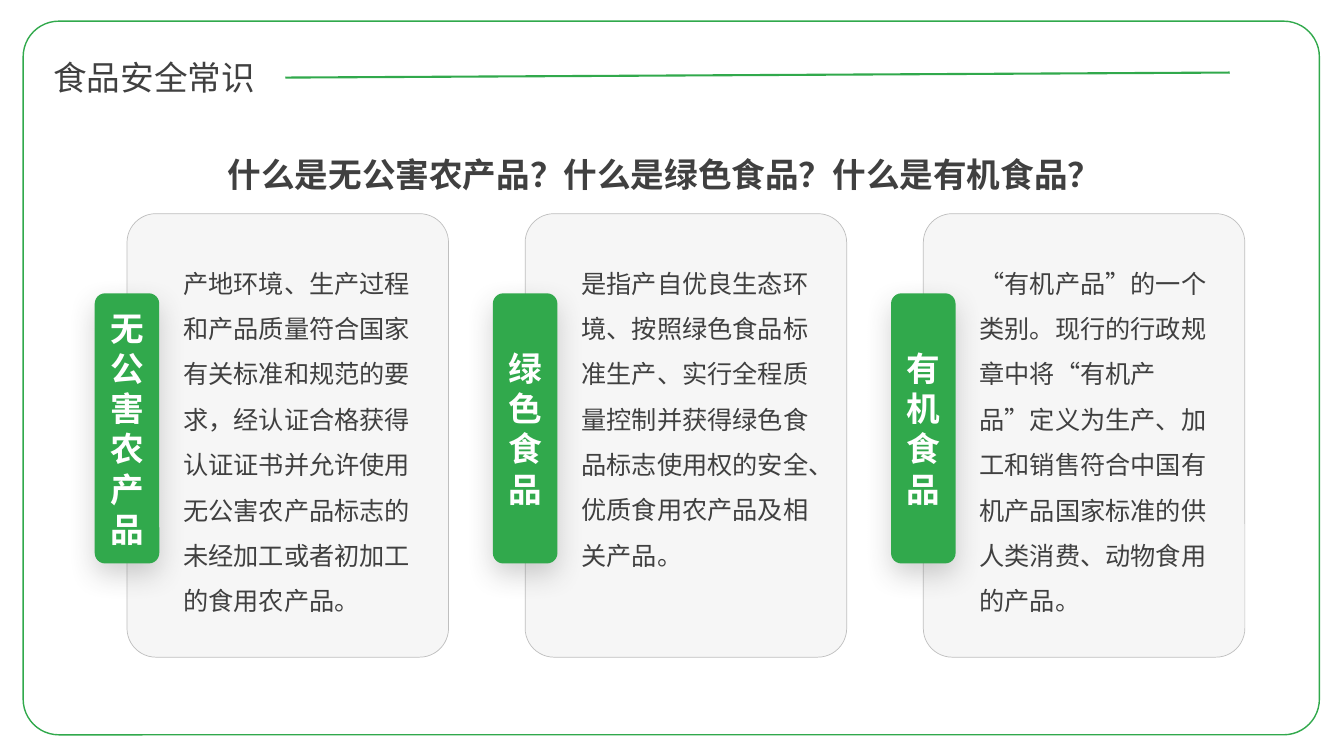
from dataclasses import dataclass

from lxml.etree import SubElement
from pptx import Presentation
from pptx.dml.color import RGBColor
from pptx.enum.shapes import MSO_CONNECTOR, MSO_SHAPE
from pptx.enum.text import MSO_ANCHOR, MSO_AUTO_SIZE, PP_ALIGN
from pptx.oxml.ns import qn
from pptx.shapes.autoshape import Shape
from pptx.util import Pt


@dataclass(frozen=True)
class Theme:
    font: str = "Noto Sans CJK SC"
    green: str = "31A94C"
    ink: str = "404040"
    white: str = "FFFFFF"
    panel: str = "F2F2F2"
    edge: str = "BFBFBF"
    head: int = 24
    body: int = 18


@dataclass(frozen=True)
class Box:
    x: float
    y: float
    w: float
    h: float

    def shift(self, dx: float) -> "Box":
        return Box(self.x + dx, self.y, self.w, self.h)

    def points(self) -> tuple:
        return Pt(self.x), Pt(self.y), Pt(self.w), Pt(self.h)


@dataclass(frozen=True)
class Card:
    label: str
    text: str
    height: float


THEME = Theme()
PITCH = 284.4
PANEL = Box(90.72, 152.64, 229.68, 316.8)
LABEL = Box(67.68, 209.52, 46.08, 192.96)

CARDS = [
    Card("无公害农产品",
         "产地环境、生产过程和产品质量符合国家有关标准和规范的要求，"
         "经认证合格获得认证证书并允许使用无公害农产品标志的"
         "未经加工或者初加工的食用农产品。", 265),
    Card("绿色食品",
         "是指产自优良生态环境、按照绿色食品标准生产、"
         "实行全程质量控制并获得绿色食品标志使用权的安全、"
         "优质食用农产品及相关产品。", 232.6),
    Card("有机食品",
         "“有机产品”的一个类别。现行的行政规章中将“有机产品”"
         "定义为生产、加工和销售符合中国有机产品国家标准的"
         "供人类消费、动物食用的产品。", 265),
]


def write(shape: Shape, text: str, size: int, color: str, bold: bool = False,
          align: PP_ALIGN = PP_ALIGN.LEFT, space: float = 1.0) -> None:
    frame = shape.text_frame
    frame.word_wrap = True
    para = frame.paragraphs[0]
    para.text = text
    para.alignment = align
    para.line_spacing = space
    font = para.font
    font.name = THEME.font
    font.size = Pt(size)
    font.bold = bold
    font.color.rgb = RGBColor.from_string(color)
    # Chinese glyphs take the East Asian typeface
    SubElement(font._element, qn("a:ea"), typeface=THEME.font)


def note(shapes, box: Box, text: str, size: int, **style) -> None:
    shape = shapes.add_textbox(*box.points())
    write(shape, text, size, THEME.ink, **style)
    shape.text_frame.auto_size = MSO_AUTO_SIZE.SHAPE_TO_FIT_TEXT


def plate(shapes, box: Box, round_by: float, fill: str,
          line: str = "", width: float = 0) -> Shape:
    shape = shapes.add_shape(MSO_SHAPE.ROUNDED_RECTANGLE, *box.points())
    shape.adjustments[0] = round_by
    shape.shadow.inherit = False
    shape.fill.solid()
    shape.fill.fore_color.rgb = RGBColor.from_string(fill)
    if line:
        shape.line.color.rgb = RGBColor.from_string(line)
        shape.line.width = Pt(width)
    else:
        shape.line.fill.background()
    return shape


def fade(color, percent: int) -> None:
    SubElement(color, qn("a:alpha"), val=str(percent * 1000))


def shade(shape: Shape) -> None:
    effects = shape._element.spPr.find(qn("a:effectLst"))
    outer = SubElement(effects, qn("a:outerShdw"), blurRad=str(Pt(20)),
                       dist=str(Pt(8)), dir=str(90 * 60000),
                       algn="t", rotWithShape="0")
    fade(SubElement(outer, qn("a:srgbClr"), val=THEME.ink), 23)


def draw_card(shapes, card: Card, dx: float) -> None:
    group = shapes.add_group_shape().shapes
    # Pale panel
    panel = plate(group, PANEL.shift(dx), 0.09, THEME.panel, THEME.edge, 0.5)
    fade(panel._element.spPr.find(qn("a:solidFill"))[0], 68)
    # Green label
    label = plate(group, LABEL.shift(dx), 0.16, THEME.green)
    shade(label)
    write(label, card.label, THEME.head, THEME.white, bold=True,
          align=PP_ALIGN.CENTER)
    label.text_frame.vertical_anchor = MSO_ANCHOR.MIDDLE
    # Definition
    note(group, Box(123.84, 177.12, 187.2, card.height).shift(dx),
         card.text, THEME.body, space=1.5)


def main() -> None:
    deck = Presentation()
    deck.slide_width, deck.slide_height = Pt(960), Pt(540)
    shapes = deck.slides.add_slide(deck.slide_layouts[6]).shapes

    # Frame and section title
    plate(shapes, Box(16.56, 15.12, 925.92, 509.76), 0.05,
          THEME.white, THEME.green, 1)
    note(shapes, Box(30.96, 37.44, 172.08, 36), "食品安全常识", THEME.head,
         align=PP_ALIGN.JUSTIFY)

    # Title rule
    rule = shapes.add_connector(MSO_CONNECTOR.STRAIGHT,
                                Pt(203.76), Pt(55.44), Pt(878.4), Pt(51.84))
    rule.line.color.rgb = RGBColor.from_string(THEME.green)
    rule.line.width = Pt(1.5)
    SubElement(rule._element.spPr, qn("a:effectLst"))

    # Question line
    note(shapes, Box(155.52, 83.52, 648.72, 52.56),
         "什么是无公害农产品？什么是绿色食品？什么是有机食品？",
         THEME.head, bold=True, align=PP_ALIGN.JUSTIFY, space=1.8)

    # Three cards
    for i, card in enumerate(CARDS):
        draw_card(shapes, card, i * PITCH)

    deck.save("out.pptx")


if __name__ == "__main__":
    main()
